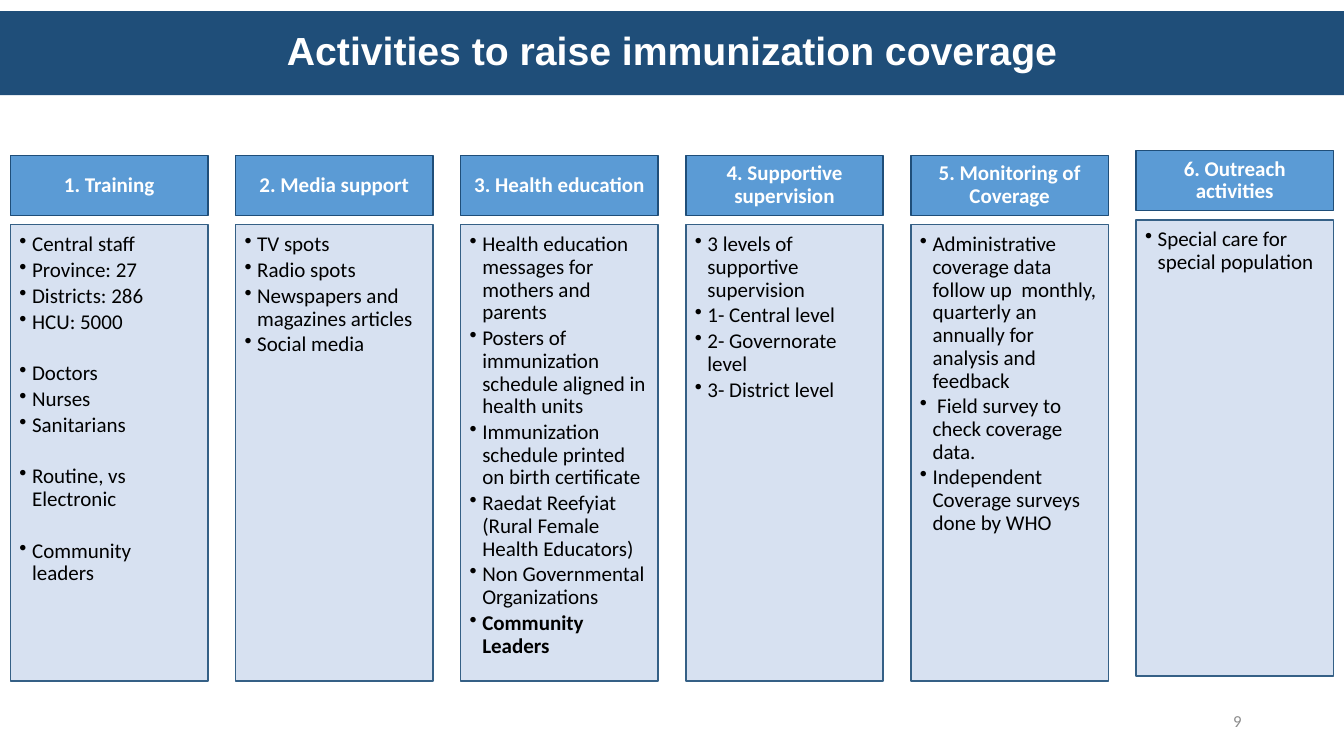
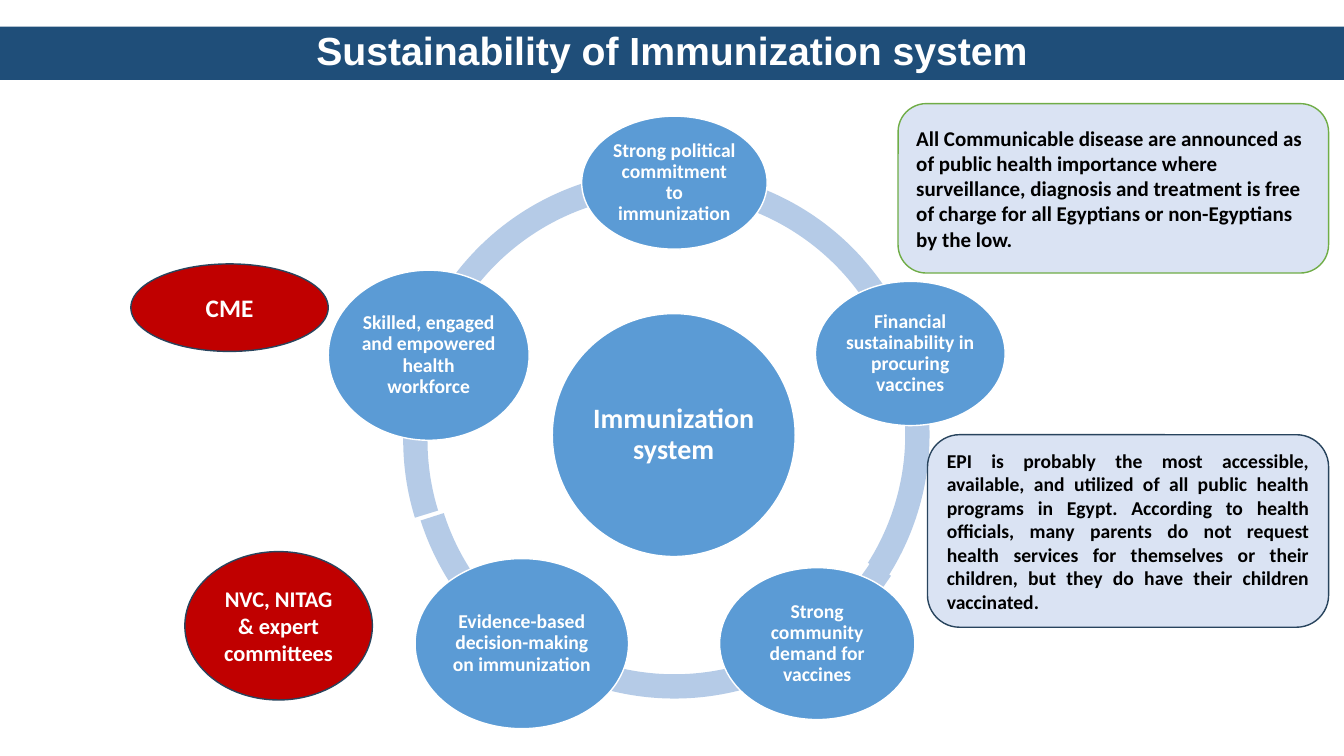
from dataclasses import dataclass

from lxml import etree
from pptx import Presentation
from pptx import util as u
from pptx.dml.color import RGBColor
from pptx.enum import shapes, text
from pptx.oxml import ns

Pt = u.Pt
Shape = shapes.MSO_SHAPE
Align = text.PP_ALIGN
Anchor = text.MSO_ANCHOR

SLIDE_WIDTH, SLIDE_HEIGHT = 960, 540
BAND_CENTER = 38
BULLET_INDENT = 9
GROUP_GAP = 18.4

COLORS = {
    "navy": "1F4E79",
    "blue": "5B9BD5",
    "column": "D7E1F1",
    "column line": "356086",
    "ring": "B5CBE7",
    "note": "DAE3F3",
    "green": "70AD47",
    "dark line": "28445D",
    "red": "C00000",
    "gray": "8C8C8C",
    "white": "FFFFFF",
    "black": "000000",
}


@dataclass
class Style:
    size: float
    color: str = "white"
    bold: bool = True
    font: str = "Calibri"
    align: Align = Align.CENTER
    spacing: float = 1.0
    before: float = 0
    after: float = 0


@dataclass
class Item:
    """A list entry; starts_group leaves a gap above it."""
    words: str
    starts_group: bool = False
    bold: bool = False


TITLE = Style(28, font="Arial", spacing=0.9)
HEADING = Style(15, spacing=0.9)
LIST = Style(15, "black", False, align=Align.LEFT, spacing=0.9, after=2.2)
HUB = Style(20, spacing=0.9)
FACTOR = Style(14, spacing=0.9)
PAGE_NUMBER = Style(12, "gray", False, align=Align.RIGHT)

ACTIVITIES = [
    ("1. Training", [
        Item("Central staff"), Item("Province: 27"), Item("Districts: 286"),
        Item("HCU: 5000"),
        Item("Doctors", starts_group=True), Item("Nurses"), Item("Sanitarians"),
        Item("Routine, vs Electronic", starts_group=True),
        Item("Community leaders", starts_group=True)]),
    ("2. Media support", [
        Item("TV spots"), Item("Radio spots"),
        Item("Newspapers and magazines articles"), Item("Social media")]),
    ("3. Health education", [
        Item("Health education messages for mothers and parents"),
        Item("Posters of immunization schedule aligned in health units"),
        Item("Immunization schedule printed on birth certificate"),
        Item("Raedat Reefyiat (Rural Female Health Educators)"),
        Item("Non Governmental Organizations"),
        Item("Community Leaders", bold=True)]),
    ("4. Supportive supervision", [
        Item("3 levels of supportive supervision"), Item("1- Central level"),
        Item("2- Governorate level"), Item("3- District level")]),
    ("5. Monitoring of Coverage", [
        Item("Administrative coverage data follow up  monthly, quarterly an "
             "annually for analysis and feedback"),
        Item(" Field survey to check coverage data."),
        Item("Independent Coverage surveys done by WHO")]),
    ("6. Outreach activities", [Item("Special care for special population")]),
]

# left, top, start angle, end angle
RING_ARCS = [
    (291.5, 125.5, 119.55, 162.24),
    (293, 121.5, 75.6, 118.8),
    (289.5, 119.5, 33.08, 74.92),
    (286.5, 121.5, 204.9, 32.38),
    (288, 125.5, 162.88, 204.17),
]

FACTORS = [
    ("Strong political commitment to immunization", (415.5, 83, 132.5, 95)),
    ("Financial sustainability in procuring vaccines", (582.5, 201, 135.5, 103)),
    ("Strong community demand for vaccines", (514, 405.5, 139.5, 108.5)),
    ("Evidence-based decision-making on immunization", (296.5, 399, 152.5, 121.5)),
    ("Skilled, engaged and empowered health workforce", (234.5, 193, 143.5, 121.5)),
]

NOTES = [
    ("All Communicable disease are announced as of public health importance "
     "where surveillance, diagnosis and treatment is free of charge for all "
     "Egyptians or non-Egyptians by the low.",
     (641.5, 74, 307.5, 121), "green",
     Style(15, "black", align=Align.LEFT, before=6, after=8)),
    ("EPI is probably the most accessible, available, and utilized of all public "
     "health programs in Egypt. According to health officials, many parents do "
     "not request health services for themselves or their children, but they do "
     "have their children vaccinated.",
     (662.5, 310.5, 286.5, 137.5), "dark line",
     Style(14, "black", align=Align.JUSTIFY)),
]

BODIES = [
    ("NVC, NITAG & expert committees", (132, 394, 134, 106), Style(16)),
    ("CME", (93.5, 188.5, 141, 62.5), Style(18)),
]


def rgb(name):
    return RGBColor.from_string(COLORS[name])


def prepare_frame(shape, margins, anchor=Anchor.MIDDLE):
    """Set wrapping, anchor and margins (left, top, right, bottom)."""
    frame = shape.text_frame
    frame.word_wrap = True
    frame.auto_size = text.MSO_AUTO_SIZE.NONE
    frame.vertical_anchor = anchor
    (frame.margin_left, frame.margin_top,
     frame.margin_right, frame.margin_bottom) = map(Pt, margins)
    return frame


def write(paragraph, words, style):
    paragraph.alignment = style.align
    paragraph.line_spacing = style.spacing
    paragraph.space_before = Pt(style.before)
    paragraph.space_after = Pt(style.after)
    run = paragraph.add_run()
    run.text = words
    run.font.name = style.font
    run.font.size = Pt(style.size)
    run.font.bold = style.bold
    run.font.color.rgb = rgb(style.color)


def add_bullet(paragraph):
    properties = paragraph._p.get_or_add_pPr()
    properties.set("marL", str(Pt(BULLET_INDENT)))
    properties.set("indent", str(-Pt(BULLET_INDENT)))
    etree.SubElement(properties, ns.qn("a:buChar")).set("char", "•")


def add_shape(slide, kind, box, fill, line=None):
    shape = slide.shapes.add_shape(kind, *map(Pt, box))
    shape.shadow.inherit = False
    shape.fill.solid()
    shape.fill.fore_color.rgb = rgb(fill)
    if line:
        shape.line.color.rgb = rgb(line)
        shape.line.width = Pt(1)
    else:
        shape.line.fill.background()
    return shape


def add_label(slide, kind, box, fill, line, words, style, margins=(7.2, 3.6, 7.2, 3.6)):
    shape = add_shape(slide, kind, box, fill, line)
    write(prepare_frame(shape, margins).paragraphs[0], words, style)


def add_title_slide(presentation, words, band_height):
    """Add a slide whose title sits on a full-width band."""
    slide = presentation.slides.add_slide(presentation.slide_layouts.get_by_name("Title Only"))
    title = slide.shapes.title
    title.left, title.top = Pt(0), Pt(BAND_CENTER - band_height / 2)
    title.width, title.height = Pt(SLIDE_WIDTH), Pt(band_height)
    title.fill.solid()
    title.fill.fore_color.rgb = rgb("navy")
    write(prepare_frame(title, (7.2, 3.6, 7.2, 3.6)).paragraphs[0], words, TITLE)
    return slide


def add_activity(slide, left, top, heading, items):
    width = 141
    add_label(slide, Shape.RECTANGLE, (left, top, width, 43), "blue", "navy",
              heading, HEADING, (8.5, 5, 8.5, 5))
    panel = add_shape(slide, Shape.RECTANGLE, (left, top + 49.5, width, 326),
                      "column", "column line")
    frame = prepare_frame(panel, (6.4, 6.4, 8.5, 9.6), Anchor.TOP)
    for index, item in enumerate(items):
        paragraph = frame.add_paragraph() if index else frame.paragraphs[0]
        write(paragraph, item.words, LIST)
        paragraph.runs[0].font.bold = item.bold
        if item.starts_group:
            paragraph.space_before = Pt(GROUP_GAP)
        add_bullet(paragraph)


def add_page_number(slide, number):
    box = slide.shapes.add_textbox(Pt(678), Pt(500.5), Pt(216), Pt(29))
    write(prepare_frame(box, (7.2, 3.6, 7.2, 3.6)).paragraphs[0], number, PAGE_NUMBER)


def add_ring_arc(slide, left, top, start, end):
    diameter, thickness = 377.5, 0.046
    arc = add_shape(slide, Shape.BLOCK_ARC, (left, top, diameter, diameter), "ring")
    # Angles are stored in 60000ths of a degree, adjustments in 100000ths.
    arc.adjustments[0] = start * 0.6
    arc.adjustments[1] = end * 0.6
    arc.adjustments[2] = thickness


def build_activities(presentation):
    slide = add_title_slide(presentation, "Activities to raise immunization coverage", 60)
    for index, (heading, items) in enumerate(ACTIVITIES):
        top = 107.5 if index == len(ACTIVITIES) - 1 else 111
        add_activity(slide, 7.5 + index * 160.8, top, heading, items)
    add_page_number(slide, "9")


def build_sustainability(presentation):
    slide = add_title_slide(presentation, "Sustainability of Immunization system", 38)
    for arc in RING_ARCS:
        add_ring_arc(slide, *arc)
    add_label(slide, Shape.OVAL, (394.5, 224, 173.5, 173.5), "blue", "white",
              "Immunization system", HUB, (2, 2, 2, 2))
    for words, box in FACTORS:
        add_label(slide, Shape.OVAL, box, "blue", "white", words, FACTOR,
                  (1.5, 1.5, 1.5, 1.5))
    for words, box, line, style in NOTES:
        add_label(slide, Shape.ROUNDED_RECTANGLE, box, "note", line, words, style)
    for words, box, style in BODIES:
        add_label(slide, Shape.OVAL, box, "red", "dark line", words, style)


def main():
    presentation = Presentation()
    presentation.slide_width = Pt(SLIDE_WIDTH)
    presentation.slide_height = Pt(SLIDE_HEIGHT)
    build_activities(presentation)
    build_sustainability(presentation)
    presentation.save("out.pptx")


if __name__ == "__main__":
    main()
